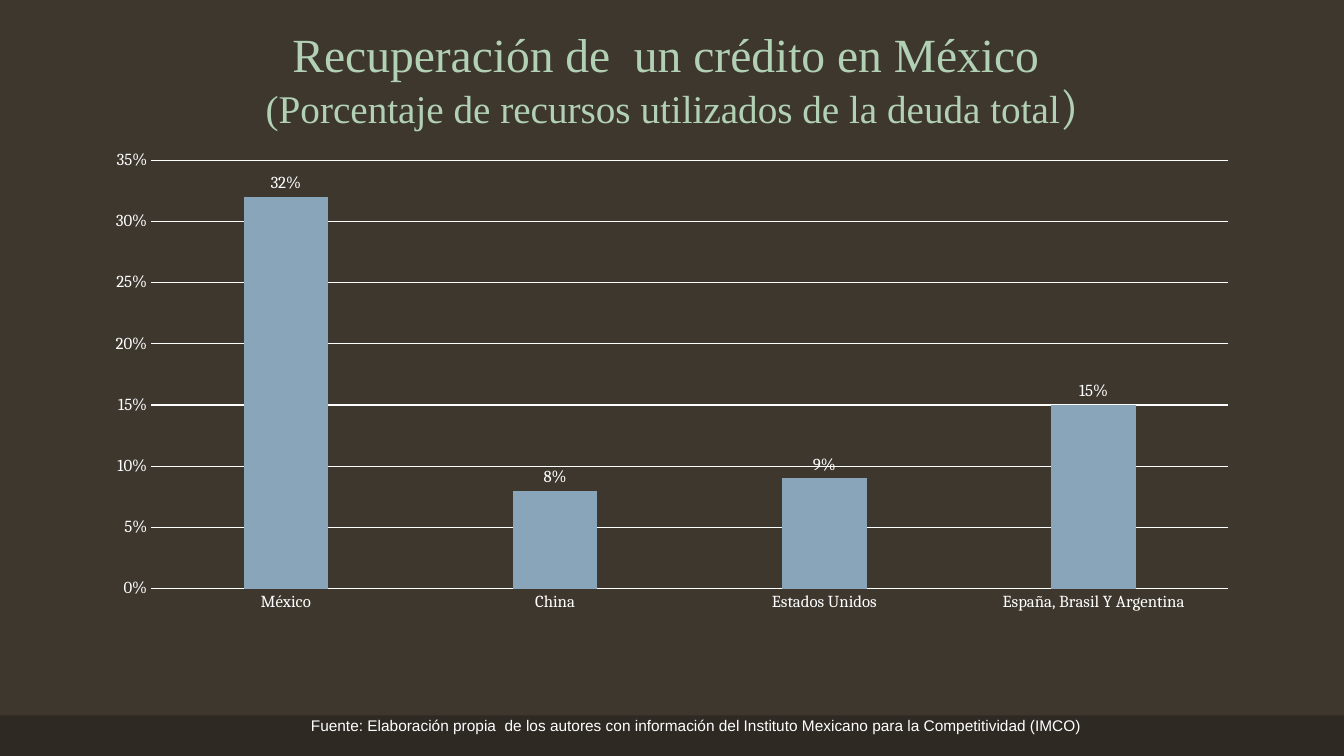
from pptx import Presentation
from pptx.chart.data import CategoryChartData
from pptx.dml.color import RGBColor
from pptx.enum.chart import XL_CHART_TYPE as CT, XL_LABEL_POSITION as LP, XL_TICK_MARK as TM
from pptx.enum.shapes import MSO_SHAPE
from pptx.enum.text import MSO_ANCHOR as ANCHOR, PP_ALIGN
from pptx.util import Cm, Pt

WHITE, GREEN, BLUE = "FFFFFF", "B2D0B4", "88A5BA"
BROWN, DARK = "3D372E", "2E2923"


def rgb(value):
    return RGBColor.from_string(value)


def add_text(s, lines, left, top, width, height, color=WHITE,
             anchor=ANCHOR.TOP, spacing=1.0):
    """Each line is a list of (text, size, font) runs."""
    tf = s.shapes.add_textbox(Cm(left), Cm(top), Cm(width), Cm(height)).text_frame
    tf.word_wrap = True
    tf.vertical_anchor = anchor
    p = tf.paragraphs[0]
    p.alignment = PP_ALIGN.CENTER
    p.line_spacing = spacing
    for i, line in enumerate(lines):
        if i:
            p.add_line_break()
        for text, size, font in line:
            r = p.add_run()
            r.text = text
            r.font.size = Pt(size)
            r.font.name = font
            r.font.color.rgb = rgb(color)


prs = Presentation()
prs.slide_width, prs.slide_height = Cm(33.87), Cm(19.05)
s = prs.slides.add_slide(prs.slide_layouts[6])

# Background and footer band
s.background.fill.solid()
s.background.fill.fore_color.rgb = rgb(BROWN)
band = s.shapes.add_shape(MSO_SHAPE.RECTANGLE, 0, Cm(18.03), prs.slide_width, Cm(1.02))
band.shadow.inherit = False
band.fill.solid()
band.fill.fore_color.rgb = rgb(DARK)
band.line.fill.background()

# Title
add_text(s, [
    [("Recuperación de  un crédito en México ", 34, "Times New Roman")],
    [("(Porcentaje de recursos utilizados de la deuda total", 28, "Times New Roman"),
     (")", 34, "Cambria")],
], 2.33, 0.33, 29.21, 3.5, color=GREEN, anchor=ANCHOR.MIDDLE, spacing=0.9)

# Chart
data = CategoryChartData(number_format="0%")
data.categories = ["México", "China", "Estados Unidos", "España, Brasil Y Argentina"]
data.add_series("Series 1", [0.32, 0.08, 0.09, 0.15])
chart = s.shapes.add_chart(CT.COLUMN_CLUSTERED, Cm(2.33), Cm(3.56),
                           Cm(29.21), Cm(12.09), data).chart
chart.has_legend = False
chart.has_title = False

plot = chart.plots[0]
plot.gap_width, plot.overlap = 219, -27
plot.vary_by_categories = False
bars = plot.series[0].format.fill
bars.solid()
bars.fore_color.rgb = rgb(BLUE)

plot.has_data_labels = True
labels = plot.data_labels
labels.show_value = True
labels.position = LP.OUTSIDE_END
labels.number_format, labels.number_format_is_linked = "0%", False

# Axes and gridlines
cat, val = chart.category_axis, chart.value_axis
for axis in (cat, val):
    axis.major_tick_mark = axis.minor_tick_mark = TM.NONE
val.minimum_scale, val.maximum_scale, val.major_unit = 0, 0.35, 0.05
val.tick_labels.number_format = "0%"
val.tick_labels.number_format_is_linked = False
val.format.line.fill.background()
for line in (cat.format.line, val.major_gridlines.format.line):
    line.color.rgb = rgb(WHITE)
    line.width = Pt(0.75)

for font in (chart.font, cat.tick_labels.font, val.tick_labels.font, labels.font):
    font.name = "Cambria"
    font.size = Pt(12)
    font.color.rgb = rgb(WHITE)

# Source note
add_text(s, [[("Fuente: Elaboración propia  de los autores con información del "
               "Instituto Mexicano para la Competitividad (IMCO)", 11, "Arial")]],
         5.54, 17.93, 24.03, 0.74)

prs.save("out.pptx")
